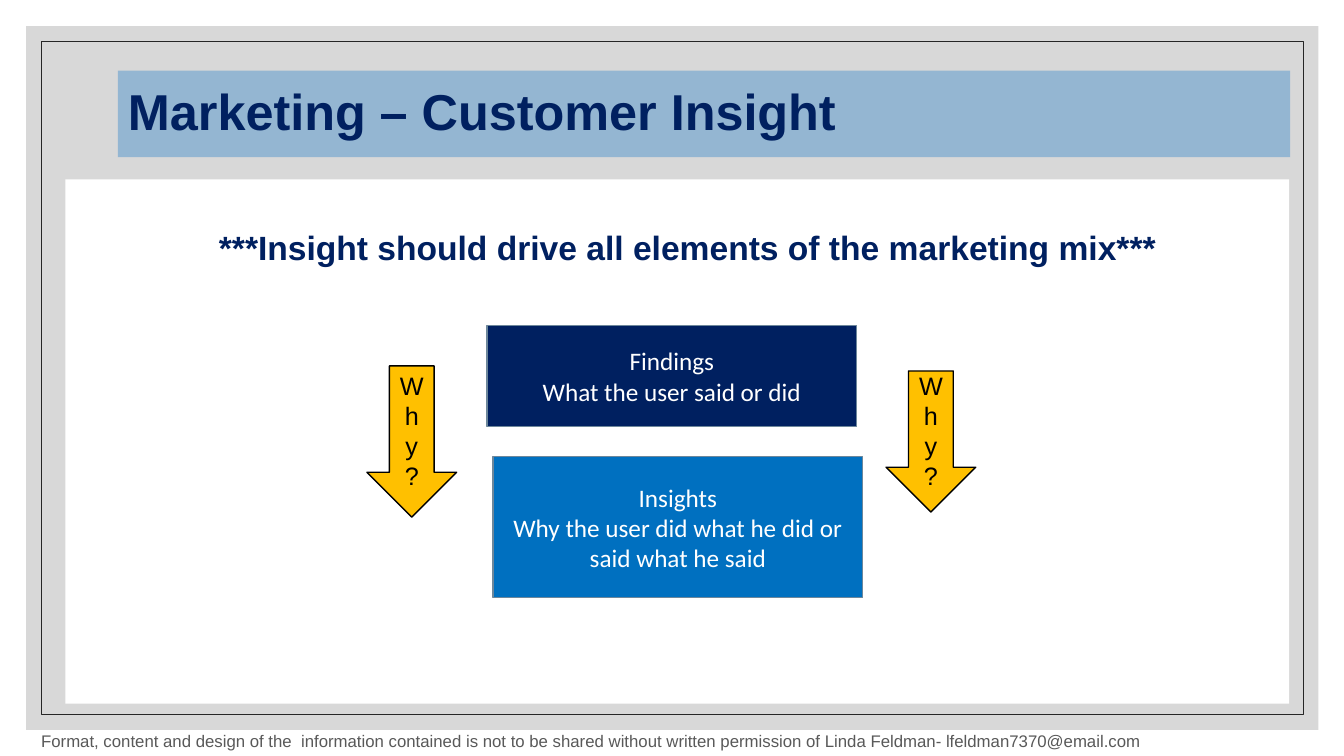
from lxml import etree
from pptx import Presentation
from pptx.dml.color import RGBColor
from pptx.enum.shapes import MSO_SHAPE
from pptx.enum.text import MSO_ANCHOR, MSO_AUTO_SIZE, PP_ALIGN
from pptx.oxml.ns import qn
from pptx.util import Pt

RECTANGLE = MSO_SHAPE.RECTANGLE
DOWN_ARROW = MSO_SHAPE.DOWN_ARROW
TOP = MSO_ANCHOR.TOP
MIDDLE = MSO_ANCHOR.MIDDLE
LEFT = PP_ALIGN.LEFT
CENTER = PP_ALIGN.CENTER
NO_FIT = MSO_AUTO_SIZE.NONE

WHITE = RGBColor(0xFF, 0xFF, 0xFF)
BLACK = RGBColor(0, 0, 0)
GREY = RGBColor(0xBF, 0xBF, 0xBF)
CHARCOAL = RGBColor(0x26, 0x26, 0x26)
FOOTER_GREY = RGBColor(0x59, 0x59, 0x59)
NAVY = RGBColor(0x00, 0x20, 0x60)
BLUE = RGBColor(0x00, 0x70, 0xC0)
PALE_BLUE = RGBColor(0x94, 0xB6, 0xD2)
SLATE = RGBColor(0x6D, 0x87, 0x9B)
AMBER = RGBColor(0xFF, 0xC0, 0x00)


def add_block(kind, bounds, fill=None, line=None, weight=1):
    block = page.shapes.add_shape(kind, *map(Pt, bounds))
    block.shadow.inherit = False
    if fill is None:
        block.fill.background()
    else:
        block.fill.solid()
        block.fill.fore_color.rgb = fill
    if line is None:
        block.line.fill.background()
    else:
        block.line.color.rgb = line
        block.line.width = Pt(weight)
    return block


def write(box, lines, font, size, color, align=CENTER, anchor=MIDDLE, bold=False):
    frame = box.text_frame
    frame.word_wrap = True
    frame.auto_size = NO_FIT
    frame.vertical_anchor = anchor
    frame.text = "\n".join(lines)
    for paragraph in frame.paragraphs:
        paragraph.alignment = align
        paragraph.font.name = font
        paragraph.font.size = Pt(size)
        paragraph.font.bold = bold
        paragraph.font.color.rgb = color


deck = Presentation()
deck.slide_width = Pt(960)
deck.slide_height = Pt(540)
page = deck.slides.add_slide(deck.slide_layouts[5])

panel = add_block(RECTANGLE, (18.7, 18.7, 923, 502.6), GREY)
panel_color = panel.fill._xPr.find(qn("a:solidFill"))[0]
etree.SubElement(panel_color, qn("a:alpha"), val="60000")
add_block(RECTANGLE, (29.5, 29.5, 901.4, 481), line=CHARCOAL, weight=0.5)

title = page.shapes.title
title.left, title.top, title.width, title.height = map(Pt, (84.2, 50.4, 837.4, 61.9))
title.fill.solid()
title.fill.fore_color.rgb = PALE_BLUE
write(title, ["Marketing – Customer Insight"], "Arial", 36, NAVY, LEFT, bold=True)
title.text_frame.paragraphs[0].line_spacing = 0.9
page.shapes.element.append(title.element)

message = add_block(RECTANGLE, (46.8, 128.2, 874.1, 374.4), WHITE)
write(message, ["***Insight should drive all elements of the marketing mix***"],
      "Arial", 24, NAVY, anchor=TOP, bold=True)
message.text_frame.margin_left = Pt(21.6)
message.text_frame.margin_top = Pt(33.7)

for left, top, height, fill, lines in (
    (347.8, 232.6, 72, NAVY, ["Findings", "What the user said or did"]),
    (352.1, 326.2, 100.8, BLUE,
     ["Insights", "Why the user did what he did or said what he said"]),
):
    card = add_block(RECTANGLE, (left, top, 264.2, height), fill, SLATE)
    write(card, lines, "Calibri", 18, WHITE)

for left, top, height in ((632.9, 265, 100.8), (262.1, 261.4, 108)):
    arrow = add_block(DOWN_ARROW, (left, top, 64.1, height), AMBER, BLACK)
    write(arrow, ["Why?"], "Arial", 18, BLACK)

footer = page.shapes.add_textbox(Pt(22.3), Pt(518.4), Pt(892.8), Pt(21.6))
write(footer, ["Format, content and design of the  information contained is not to be shared "
               "without written permission of Linda Feldman- lfeldman7370@email.com"],
      "Arial", 12, FOOTER_GREY, LEFT, TOP)

deck.save("out.pptx")
